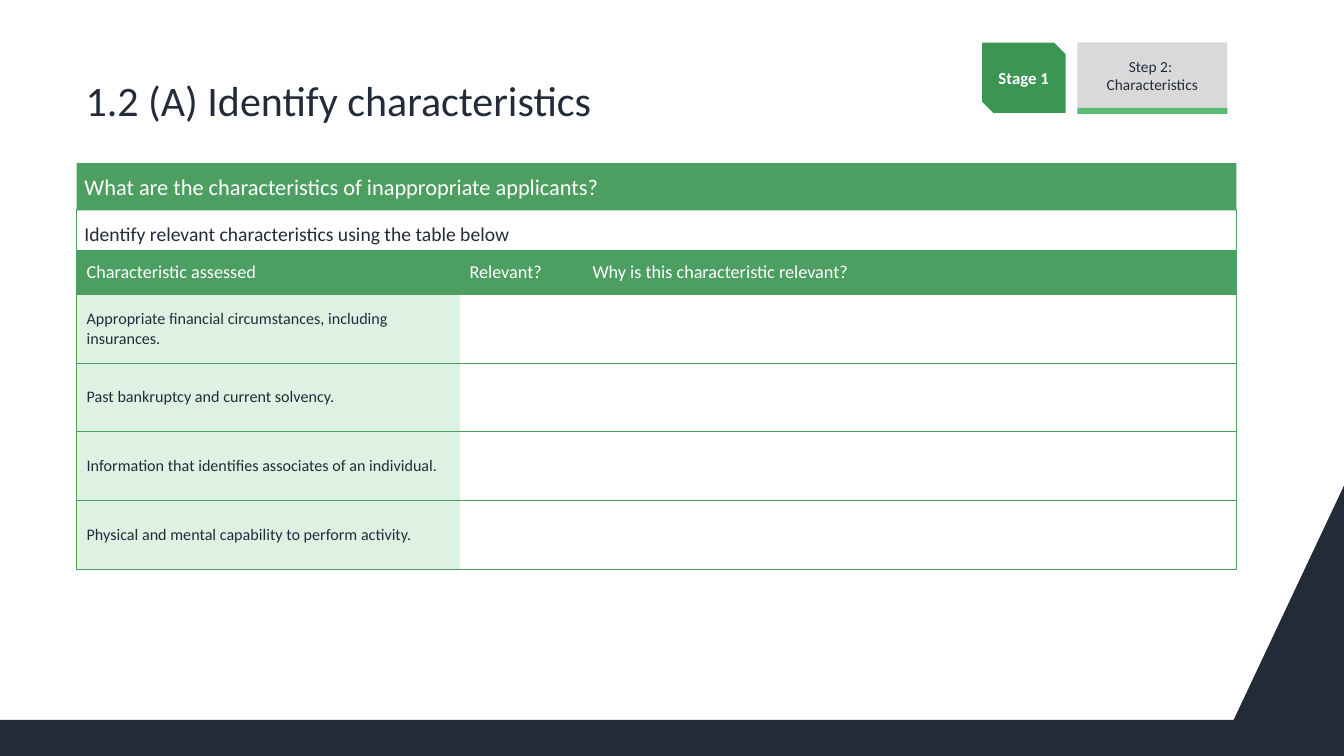
from lxml import etree
from pptx import Presentation
from pptx.dml.color import RGBColor
from pptx.enum.shapes import MSO_SHAPE
from pptx.enum.text import MSO_ANCHOR, PP_ALIGN
from pptx.oxml.ns import qn
from pptx.util import Cm, Pt

NAVY = RGBColor(0x23, 0x2B, 0x39)
GREEN = RGBColor(0x4C, 0x9E, 0x61)
STAGE_GREEN = RGBColor(0x3C, 0x96, 0x53)
BRIGHT_GREEN = RGBColor(0x5B, 0xBD, 0x74)
PALE_GREEN = RGBColor(0xDE, 0xF2, 0xE3)
GREY = RGBColor(0xD9, 0xD9, 0xD9)
WHITE = RGBColor(0xFF, 0xFF, 0xFF)

RECTANGLE = MSO_SHAPE.RECTANGLE
SNIPPED = MSO_SHAPE.SNIP_2_DIAG_RECTANGLE
TOP, MIDDLE = MSO_ANCHOR.TOP, MSO_ANCHOR.MIDDLE
LEFT, CENTER = PP_ALIGN.LEFT, PP_ALIGN.CENTER

SLIDE_WIDTH, SLIDE_HEIGHT = 33.87, 19.05
MARGIN, CONTENT_WIDTH = 1.93, 29.23
PLACEHOLDER_INSETS = (0.2, 0.13, 0.2, 0.13)

COLUMN_WIDTHS = (9.65, 3.1, 16.48)
HEADER_HEIGHT, ROW_HEIGHT = 1.12, 1.73
HEADERS = ("Characteristic assessed", "Relevant?", "Why is this characteristic relevant?")
CHARACTERISTICS = (
    "Appropriate financial circumstances, including insurances.",
    "Past bankruptcy and current solvency.",
    "Information that identifies associates of an individual.",
    "Physical and mental capability to perform activity.",
)


class SlideBuilder:
    font_name = "Calibri"

    def __init__(self, slide):
        self.slide = slide

    def paint(self, shape, fill, line=None, line_width=0.75):
        shape.shadow.inherit = False
        if fill is None:
            shape.fill.background()
        else:
            shape.fill.solid()
            shape.fill.fore_color.rgb = fill
        if line is None:
            shape.line.fill.background()
        else:
            shape.line.color.rgb = line
            shape.line.width = Pt(line_width)

    def add_text(self, frame, lines, size, color, bold=False, align=LEFT, space_before=None):
        paragraph = frame.paragraphs[0]
        paragraph.alignment = align
        if space_before is not None:
            paragraph.space_before = Pt(space_before)
        for index, text in enumerate(lines):
            if index:
                paragraph.add_line_break()
            run = paragraph.add_run()
            run.text = text
            run.font.name = self.font_name
            run.font.size = Pt(size)
            run.font.bold = bold
            run.font.color.rgb = color

    def frame(self, shape, anchor=MIDDLE, insets=None):
        frame = shape.text_frame
        frame.word_wrap = True
        frame.vertical_anchor = anchor
        if insets:
            (frame.margin_left, frame.margin_top,
             frame.margin_right, frame.margin_bottom) = map(Cm, insets)
        return frame

    def box(self, kind, bounds, fill, line=None, line_width=0.75, parent=None):
        shapes = (parent or self.slide).shapes
        shape = shapes.add_shape(kind, *map(Cm, bounds))
        self.paint(shape, fill, line, line_width)
        return shape

    def text_box(self, bounds):
        return self.slide.shapes.add_textbox(*map(Cm, bounds))

    def polygon(self, points, fill):
        start, *rest = [(Cm(x), Cm(y)) for x, y in points]
        builder = self.slide.shapes.build_freeform(*start)
        builder.add_line_segments(rest, close=True)
        self.paint(builder.convert_to_shape(), fill)

    def cell_borders(self, cell, visible):
        properties = cell._tc.get_or_add_tcPr()
        for index, side in enumerate("LRTB"):
            line = etree.Element(qn("a:ln" + side), w=str(Pt(0.5)))
            if side in visible:
                fill = etree.SubElement(line, qn("a:solidFill"))
                etree.SubElement(fill, qn("a:srgbClr"), val=str(GREEN))
            else:
                etree.SubElement(line, qn("a:noFill"))
            properties.insert(index, line)

    def table(self, left, top):
        rows = [HEADERS] + [(text, "", "") for text in CHARACTERISTICS]
        heights = [HEADER_HEIGHT] + [ROW_HEIGHT] * len(CHARACTERISTICS)
        table = self.slide.shapes.add_table(
            len(rows), len(COLUMN_WIDTHS), Cm(left), Cm(top),
            Cm(sum(COLUMN_WIDTHS)), Cm(sum(heights))).table
        table.horz_banding = False
        for column, width in zip(table.columns, COLUMN_WIDTHS):
            column.width = Cm(width)
        for row, height in zip(table.rows, heights):
            row.height = Cm(height)
        last_column = len(COLUMN_WIDTHS) - 1
        for row_index, texts in enumerate(rows):
            header = row_index == 0
            for column_index, text in enumerate(texts):
                cell = table.cell(row_index, column_index)
                cell.vertical_anchor = MIDDLE
                if header or column_index == 0:
                    cell.fill.solid()
                    cell.fill.fore_color.rgb = GREEN if header else PALE_GREEN
                else:
                    cell.fill.background()
                if text:
                    self.add_text(cell.text_frame, [text], 13 if header else 11.5,
                                  WHITE if header else NAVY)
                sides = "TB" + "L" * (column_index == 0) + "R" * (column_index == last_column)
                self.cell_borders(cell, sides)


def main():
    presentation = Presentation()
    presentation.slide_width = Cm(SLIDE_WIDTH)
    presentation.slide_height = Cm(SLIDE_HEIGHT)
    builder = SlideBuilder(presentation.slides.add_slide(presentation.slide_layouts[6]))

    builder.polygon([(31.09, 18.14), (0, 18.14), (0, SLIDE_HEIGHT),
                     (SLIDE_WIDTH, SLIDE_HEIGHT), (SLIDE_WIDTH, 12.24)], NAVY)

    instruction = builder.box(RECTANGLE, (MARGIN, 5.28, CONTENT_WIDTH, 2.06), None, GREEN)
    builder.add_text(builder.frame(instruction, TOP, (0.2, 0.3, 0.2, 0.13)),
                     ["Identify relevant characteristics using the table below"],
                     14, NAVY, space_before=6)

    question = builder.box(RECTANGLE, (MARGIN, 4.11, CONTENT_WIDTH, 1.19), GREEN)
    builder.add_text(builder.frame(question, insets=PLACEHOLDER_INSETS),
                     ["What are the characteristics of inappropriate applicants?"],
                     16, WHITE, space_before=10)

    title = builder.text_box((1.96, 1.24, CONTENT_WIDTH, 2.57))
    builder.add_text(builder.frame(title, insets=PLACEHOLDER_INSETS),
                     ["1.2 (A) Identify characteristics"], 30, NAVY)

    builder.table(MARGIN, 6.3)

    stage = builder.box(SNIPPED, (24.71, 1.04, 2.18, 1.85), STAGE_GREEN, WHITE, 2)
    builder.add_text(builder.frame(stage), ["Stage 1"], 12, WHITE, bold=True, align=CENTER)

    step_group = builder.slide.shapes.add_group_shape()
    step = builder.box(RECTANGLE, (27.15, 1.07, 3.78, 1.65), GREY, parent=step_group)
    builder.add_text(builder.frame(step), ["Step 2: ", "Characteristics"], 11, NAVY, align=CENTER)
    builder.box(RECTANGLE, (27.15, 2.72, 3.78, 0.15), BRIGHT_GREEN, parent=step_group)

    presentation.save("out.pptx")


if __name__ == "__main__":
    main()
